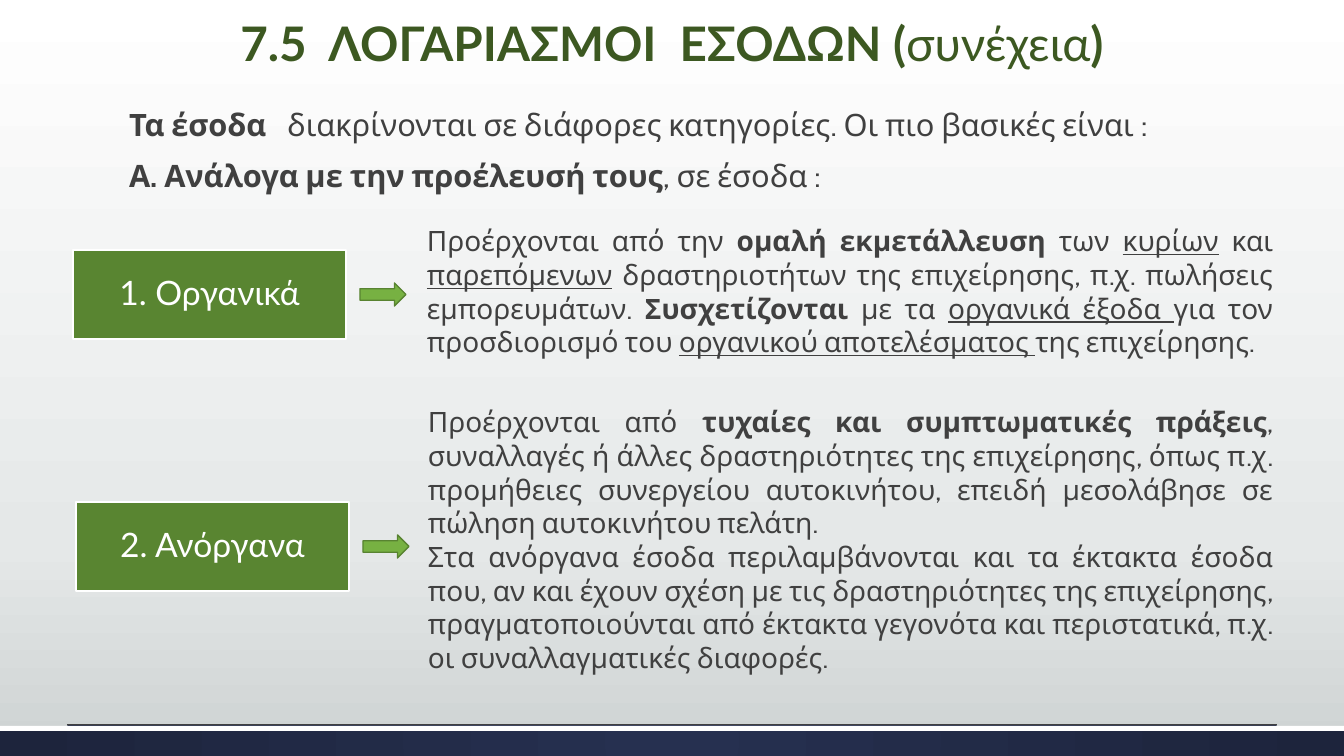
import dataclasses

import lxml.etree
import pptx
import pptx.dml.color
import pptx.enum.shapes
import pptx.enum.text
import pptx.oxml.ns
import pptx.util

SCALE = 914400 / 100.8
SHAPE = pptx.enum.shapes.MSO_SHAPE
ALIGN = pptx.enum.text.PP_ALIGN
ANCHOR = pptx.enum.text.MSO_ANCHOR
qn = pptx.oxml.ns.qn


@dataclasses.dataclass(frozen=True)
class Theme:
    """Colours, fonts and type sizes."""
    white: str = "FFFFFF"
    ink: str = "404040"
    title: str = "3C5821"
    label: str = "598531"
    arrow: str = "77B142"
    edge: str = "588331"
    sky: tuple = ((0, "FFFFFF"), (72, "E5E8E8"), (100, "CDD2D2"))
    navy: tuple = ((0, "263050"), (100, "1D243C"))
    head: str = "Lato"
    body: str = "Cabin"
    big: int = 34
    mid: int = 24
    lead: int = 22
    small: int = 20


THEME = Theme()

TITLE = [[("7.5  ΛΟΓΑΡΙΑΣΜΟΙ  ΕΣΟΔΩΝ (", "b"), ("συνέχεια", ""), (")", "b")]]
LEAD = [
    [("Τα έσοδα  ", "b"),
     (" διακρίνονται σε διάφορες κατηγορίες. Οι πιο βασικές είναι :", "")],
    [("Α. Ανάλογα με την προέλευσή τους", "b"), (", σε έσοδα :", "")],
]
REGULAR = [[
    ("Προέρχονται από την ", ""), ("ομαλή εκμετάλλευση ", "b"), ("των ", ""),
    ("κυρίων", "u"), (" και ", ""), ("παρεπόμενων", "u"),
    (" δραστηριοτήτων της επιχείρησης, π.χ. πωλήσεις εμπορευμάτων. ", ""),
    ("Συσχετίζονται", "b"), (" με τα ", ""), ("οργανικά έξοδα ", "u"),
    ("για τον προσδιορισμό του ", ""), ("οργανικού αποτελέσματος ", "u"),
    ("της επιχείρησης.", ""),
]]
CASUAL = [
    [("Προέρχονται από ", ""), ("τυχαίες και συμπτωματικές πράξεις", "b"),
     (", συναλλαγές ή άλλες δραστηριότητες της επιχείρησης, όπως π.χ. "
      "προμήθειες συνεργείου αυτοκινήτου, επειδή μεσολάβησε σε πώληση "
      "αυτοκινήτου πελάτη.", "")],
    [("Στα ανόργανα έσοδα περιλαμβάνονται και τα έκτακτα έσοδα που, αν και "
      "έχουν σχέση με τις δραστηριότητες της επιχείρησης, πραγματοποιούνται "
      "από έκτακτα γεγονότα και περιστατικά, π.χ. οι συναλλαγματικές "
      "διαφορές.", "")],
]
ROWS = [
    ("1. Οργανικά", 73, 250, REGULAR, (417, 219, 866, 146)),
    ("2. Ανόργανα", 76, 502, CASUAL, (418, 400, 865, 281)),
]


def px(num):
    """Turn pixels into EMU."""
    return pptx.util.Emu(round(num * SCALE))


def tint(code):
    """Return a colour for a hex code."""
    return pptx.dml.color.RGBColor.from_string(code)


def place(shape, box):
    """Move and size a shape."""
    shape.left, shape.top, shape.width, shape.height = map(px, box)


def blend(fill, root, stops, round_=False):
    """Give a fill its gradient stops, running down or from the centre."""
    fill.gradient()
    fill.gradient_angle = 270
    grad = next(root.iter(qn("a:gradFill")))
    listing = grad.find(qn("a:gsLst"))
    for stop in list(listing):
        listing.remove(stop)
    for pos, code in stops:
        stop = lxml.etree.SubElement(listing, qn("a:gs"), pos=str(pos * 1000))
        lxml.etree.SubElement(stop, qn("a:srgbClr"), val=code)
    if round_:
        grad.remove(grad.find(qn("a:lin")))
        ring = lxml.etree.SubElement(grad, qn("a:path"), path="circle")
        sides = dict.fromkeys("ltrb", "50000")
        lxml.etree.SubElement(ring, qn("a:fillToRect"), **sides)


def block(slide, kind, box, fill=None, edge=None):
    """Add a preset shape without shadow."""
    shape = slide.shapes.add_shape(kind, *map(px, box))
    shape.shadow.inherit = False
    if fill:
        shape.fill.solid()
        shape.fill.fore_color.rgb = tint(fill)
    if edge:
        shape.line.color.rgb = tint(edge)
        shape.line.width = pptx.util.Pt(1)
    else:
        shape.line.fill.background()
    return shape


def write(frame, paras, size, font, color, align):
    """Fill a text frame with styled runs."""
    frame.word_wrap = True
    frame.auto_size = pptx.enum.text.MSO_AUTO_SIZE.NONE
    for num, parts in enumerate(paras):
        para = frame.add_paragraph() if num else frame.paragraphs[0]
        para.alignment = align
        para.space_before = pptx.util.Pt(0)
        for text, style in parts:
            run = para.add_run()
            run.text = text
            run.font.size = pptx.util.Pt(size)
            run.font.name = font
            run.font.color.rgb = tint(color)
            run.font.bold = "b" in style
            run.font.underline = "u" in style


def heading(slide):
    """Fill the title placeholder."""
    shape = slide.shapes.title
    place(shape, (148, 11, 1048, 66))
    frame = shape.text_frame
    write(frame, TITLE, THEME.big, THEME.head, THEME.title, ALIGN.CENTER)
    frame.vertical_anchor = ANCHOR.BOTTOM
    frame.paragraphs[0].line_spacing = 0.9


def intro(slide):
    """Fill the body placeholder with plain lines."""
    shape = slide.placeholders[1]
    place(shape, (119, 96, 1097, 104))
    frame = shape.text_frame
    write(frame, LEAD, THEME.lead, THEME.body, THEME.ink, ALIGN.JUSTIFY)
    for para in frame.paragraphs:
        para.line_spacing = pptx.util.Pt(30)
        props = para._p.get_or_add_pPr()
        props.set("marL", "0")
        props.set("indent", "0")
        lxml.etree.SubElement(props, qn("a:buNone"))
    frame.paragraphs[0].space_after = pptx.util.Pt(6)


def row(slide, name, left, top, paras, box):
    """Add a label, its arrow and its explanation."""
    label = block(slide, SHAPE.RECTANGLE, (left, top, 273, 89),
                  THEME.label, THEME.white)
    frame = label.text_frame
    write(frame, [[(name, "")]], THEME.mid, THEME.head, THEME.white,
          ALIGN.CENTER)
    frame.vertical_anchor = ANCHOR.MIDDLE
    frame.paragraphs[0].line_spacing = 0.9
    block(slide, SHAPE.RIGHT_ARROW, (left + 287, top + 33, 46, 23),
          THEME.arrow, THEME.edge)
    text = slide.shapes.add_textbox(*map(px, box))
    write(text.text_frame, paras, THEME.small, THEME.body, THEME.ink,
          ALIGN.JUSTIFY)


def footer(slide):
    """Add the bottom band and its rule."""
    band = block(slide, SHAPE.RECTANGLE, (0, 726, 1344, 30))
    blend(band.fill, band._element, THEME.navy, True)
    block(slide, SHAPE.RECTANGLE, (0, 726, 1344, 5), THEME.white)
    rule = slide.shapes.add_connector(
        pptx.enum.shapes.MSO_CONNECTOR.STRAIGHT,
        px(67), px(725), px(1277), px(725))
    rule.line.color.rgb = tint(THEME.ink)
    rule.line.width = pptx.util.Pt(0.75)
    lxml.etree.SubElement(rule._element.spPr, qn("a:effectLst"))


def main():
    """Build and save the slide."""
    deck = pptx.Presentation()
    deck.slide_width, deck.slide_height = px(1344), px(756)
    slide = deck.slides.add_slide(deck.slide_layouts[1])
    blend(slide.background.fill, slide._element, THEME.sky)
    footer(slide)
    heading(slide)
    intro(slide)
    for item in ROWS:
        row(slide, *item)
    deck.save("out.pptx")


if __name__ == "__main__":
    main()
